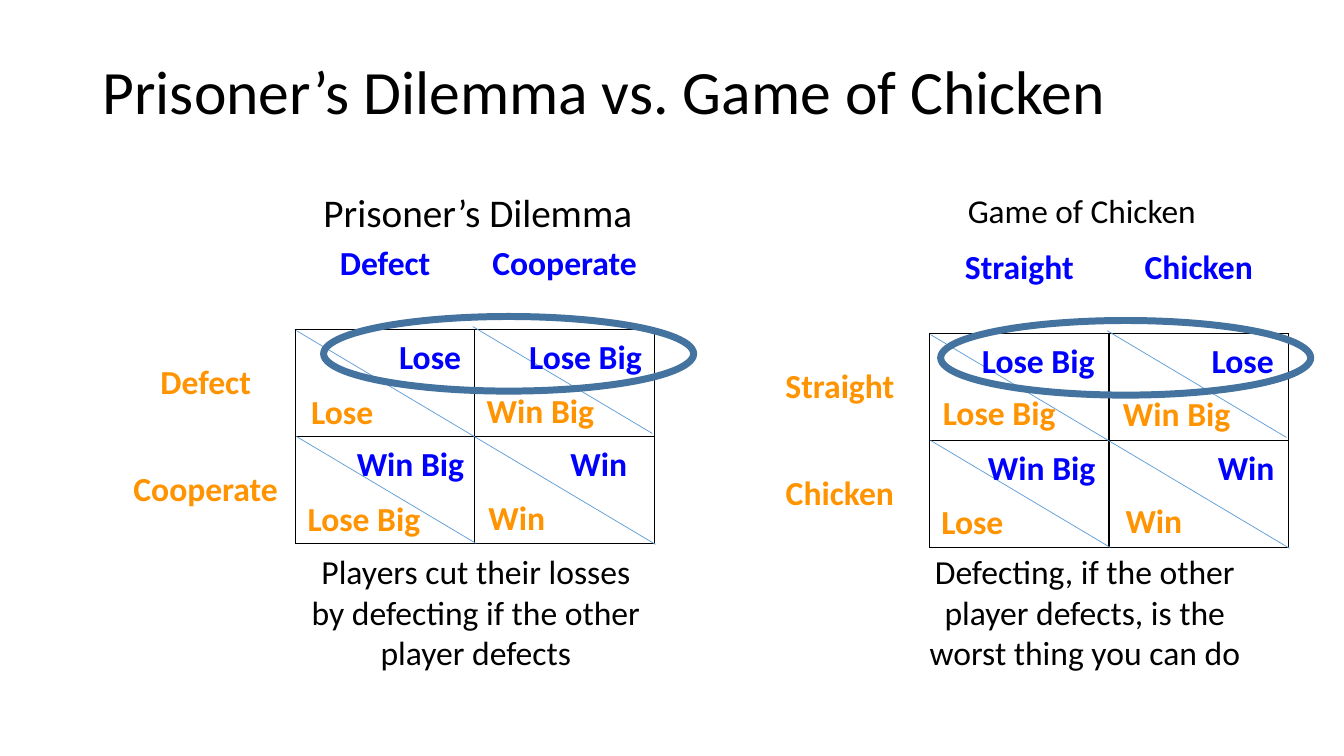
from lxml import etree
from pptx import Presentation
from pptx import util as u
from pptx.dml.color import RGBColor
from pptx.enum import shapes, text
from pptx.oxml import ns

theme = dict(font="Calibri", black="000000", blue="0000FF", gold="FF9300",
             thin="5B9BD5", ring="43739E", title=44, head=28, body=24)
mid, left = text.PP_ALIGN.CENTER, text.PP_ALIGN.LEFT

deck = Presentation()
deck.slide_width, deck.slide_height = u.Inches(13.33), u.Inches(7.5)
slide = deck.slides.add_slide(deck.slide_layouts[6])
items = slide.shapes


def style(frame, words, size, color, bold=False, align=left, space=None):
    frame.text = words
    par = frame.paragraphs[0]
    par.alignment, par.line_spacing = align, space
    par.font.name, par.font.size, par.font.bold = theme["font"], u.Pt(size), bold
    par.font.color.rgb = RGBColor.from_string(theme[color])


def label(x, y, w, h, words, size, color="black", wrap=True, middle=False, **look):
    frame = items.add_textbox(*map(u.Inches, (x, y, w, h))).text_frame
    frame.word_wrap = wrap
    if middle:
        frame.vertical_anchor = text.MSO_ANCHOR.MIDDLE
    style(frame, words, size, color, **look)


# Title
label(0.92, 0.4, 11.5, 1.07, "Prisoner’s Dilemma vs. Game of Chicken",
      theme["title"], middle=True, space=0.9)

# Grid shared by both games: one heading row and column, then 2 x 2 payoffs
col, top, row = 1.78, 1.3, 1.06
wide = {"Lose": 0.83, "Lose Big": 1.34, "Win": 0.77, "Win Big": 1.28}
# Diagonals: from column and row, to column and row, nudge across and down
slants = [(0, 0, 2, 2, 0.01, 0.01), (0, 1, 1, 2, 0.01, 0), (1, 0, 2, 1, -0.02, -0.03)]

# Payoffs: column player, right inset, row player, left inset, row player's drop
games = [
    dict(x=1.15, y=1.97, moves=["Defect", "Cooperate"],
         head=("Prisoner’s Dilemma", 1.96, -0.15, 3.35, theme["head"], 0.9),
         note=("Players cut their losses by defecting if the other player defects", 1.82),
         ring=2.06,
         pay=[[("Lose", 0.02, "Lose", 0.05, 0.56), ("Lose Big", 0, "Win Big", 0.01, 0.55)],
              [("Win Big", -0.01, "Lose Big", 0.01, 0.56), ("Win", 0.16, "Win", 0.03, 0.55)]]),
    dict(x=7.44, y=2.01, moves=["Straight", "Chicken"],
         head=("Game of Chicken", 2.06, -0.2, 2.55, 23.8, 0.8),
         note=("Defecting, if the other player defects, is the worst thing you can do", 1.57),
         ring=1.89,
         pay=[[("Lose Big", 0.02, "Lose Big", 0.02, 0.53), ("Lose", 0.03, "Win Big", 0.03, 0.54)],
              [("Win Big", 0.02, "Lose", 0.01, 0.55), ("Win", 0.03, "Win", 0.06, 0.54)]]),
]

for game in games:
    x, y, moves = game["x"], game["y"], game["moves"]
    gx, gy = x + col, y + top

    # Table with moves along the top and the left side
    grid = items.add_table(3, 3, *map(u.Inches, (x, y, 3 * col, top + 2 * row))).table
    grid.first_row = grid.horz_banding = False
    for c in range(3):
        grid.columns[c].width = u.Inches(col)
    for r in range(3):
        grid.rows[r].height = u.Inches(row if r else top)
        for c in range(3):
            cell = grid.cell(r, c)
            cell.vertical_anchor = text.MSO_ANCHOR.MIDDLE
            if (r == 0) != (c == 0):
                style(cell.text_frame, moves[r + c - 1], theme["body"],
                      "gold" if r else "blue", bold=True, align=mid)
            # Edges round payoff cells only
            edges = {"L": r and c, "R": r, "T": r and c, "B": c}
            props = cell._tc.get_or_add_tcPr()
            for side, shown in edges.items():
                edge = etree.SubElement(props, ns.qn("a:ln" + side), w="12700")
                if shown:
                    fill = etree.SubElement(edge, ns.qn("a:solidFill"))
                    etree.SubElement(fill, ns.qn("a:srgbClr"), val=theme["black"])
                else:
                    etree.SubElement(edge, ns.qn("a:noFill"))
            cell.fill.background()

    # Diagonals
    for c1, r1, c2, r2, dx, dy in slants:
        ends = (gx + c1 * col + dx, gy + r1 * row + dy,
                gx + c2 * col + dx, gy + r2 * row + dy)
        line = items.add_connector(shapes.MSO_CONNECTOR.STRAIGHT, *map(u.Inches, ends))
        line.line.color.rgb = RGBColor.from_string(theme["thin"])
        line.line.width = u.Pt(0.5)
        etree.SubElement(line._element.spPr, ns.qn("a:effectLst"))

    # Payoffs
    for r, pairs in enumerate(game["pay"]):
        for c, (blue, right, gold, inset, drop) in enumerate(pairs):
            cx, cy = gx + c * col, gy + r * row
            label(cx + col - right - wide[blue], cy + 0.01, wide[blue], 0.5, blue,
                  theme["body"], "blue", wrap=False, bold=True)
            label(cx + inset, cy + drop, wide[gold], 0.5, gold,
                  theme["body"], "gold", wrap=False, bold=True, align=mid)

    # Heading and note
    words, dx, dy, w, size, space = game["head"]
    label(x + dx, y + dy, w, 0.62, words, size, middle=True, space=space)
    words, dx = game["note"]
    label(x + dx, 5.42, 3.5, 1.31, words, theme["body"], align=mid)

    # Ring round the top payoffs
    spot = (x + game["ring"], y + 1.17, 3.67, 0.74)
    ring = items.add_shape(shapes.MSO_SHAPE.OVAL, *map(u.Inches, spot))
    ring.shadow.inherit = False
    ring.fill.background()
    ring.line.color.rgb = RGBColor.from_string(theme["ring"])
    ring.line.width = u.Pt(5)

deck.save("out.pptx")
